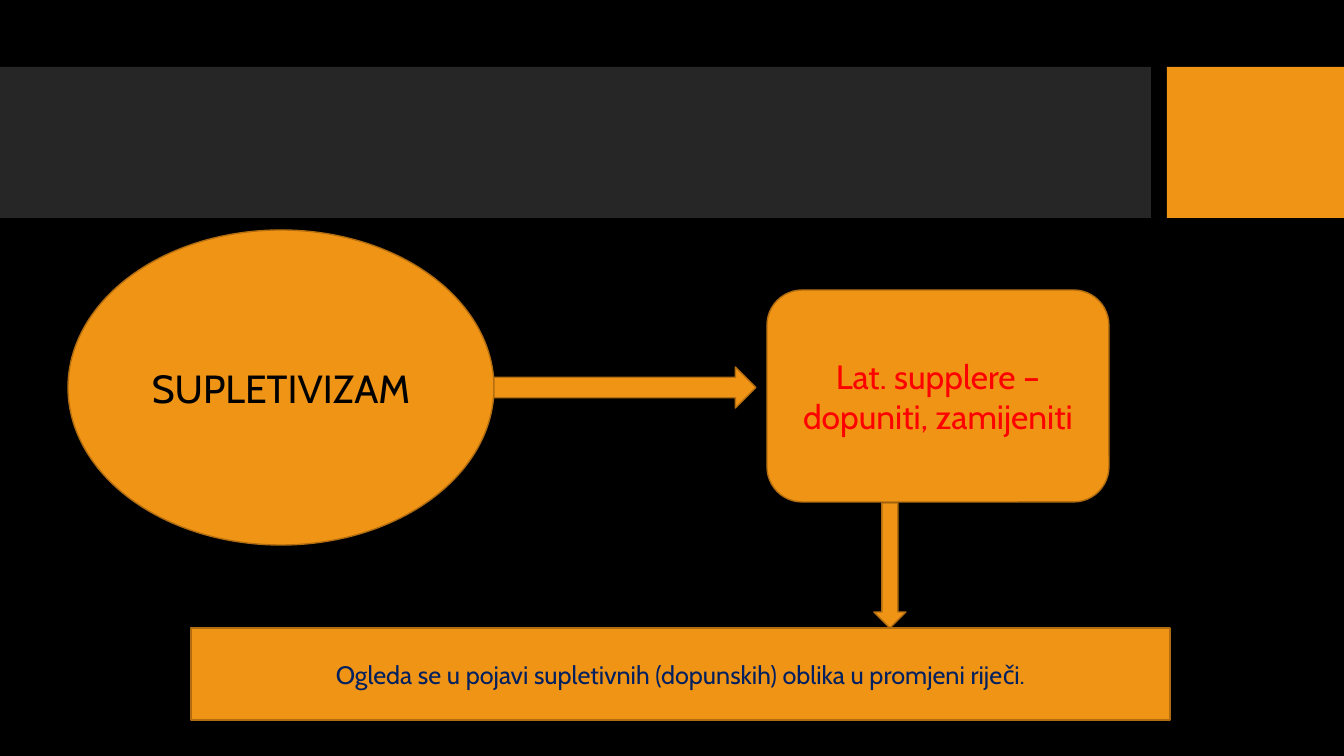
from pptx import Presentation
from pptx.dml.color import RGBColor
from pptx.enum.shapes import MSO_SHAPE
from pptx.enum.text import MSO_ANCHOR, PP_ALIGN
from pptx.util import Emu, Pt

RECT, OVAL, ROUNDED = MSO_SHAPE.RECTANGLE, MSO_SHAPE.OVAL, MSO_SHAPE.ROUNDED_RECTANGLE
RIGHT_ARROW, DOWN_ARROW = MSO_SHAPE.RIGHT_ARROW, MSO_SHAPE.DOWN_ARROW
MIDDLE, CENTER = MSO_ANCHOR.MIDDLE, PP_ALIGN.CENTER

SLIDE_W, SLIDE_H = 1344, 756
EMU_PER_PX = 12192000 / SLIDE_W
FONT = "Cabin"
BLACK, CHARCOAL, ORANGE, BROWN = "000000", "262626", "F09415", "B26D10"
RED, NAVY = "FF0000", "002060"


def px(length):
    return Emu(round(length * EMU_PER_PX))


def color(hex_value):
    return RGBColor.from_string(hex_value)


def add_block(slide, kind, box, fill, outline=None):
    block = slide.shapes.add_shape(kind, *(px(length) for length in box))
    block.shadow.inherit = False
    block.fill.solid()
    block.fill.fore_color.rgb = color(fill)
    if outline:
        block.line.color.rgb = color(outline)
        block.line.width = Pt(1)
    else:
        block.line.fill.background()
    return block


def write_label(block, text, size, text_color):
    frame = block.text_frame
    frame.word_wrap = True
    frame.vertical_anchor = MIDDLE
    paragraph = frame.paragraphs[0]
    paragraph.alignment = CENTER
    run = paragraph.add_run()
    run.text = text
    for name, value in {"name": FONT, "size": Pt(size)}.items():
        setattr(run.font, name, value)
    run.font.color.rgb = color(text_color)


def draw_header_band(slide, box):
    left, top, width, height = box
    accent_w, gap = 177, 16
    add_block(slide, RECT, (left, top, width - accent_w - gap, height), CHARCOAL)
    add_block(slide, RECT, (left + width - accent_w, top, accent_w, height), ORANGE)


def draw_concept_diagram(slide, box):
    left, top, width, height = box
    term_w, term_h = 426, 315
    origin_x, origin_y, origin_w, origin_h = left + 699, top + 60, 342, 212
    meaning_x, meaning_w, meaning_h = left + 123, width - 123, 92
    meaning_y = top + height - meaning_h
    across_h, down_w = 41, 32

    # Term, its Latin origin and its meaning
    labelled = [
        (OVAL, (left, top, term_w, term_h), "SUPLETIVIZAM", 28, BLACK),
        (ROUNDED, (origin_x, origin_y, origin_w, origin_h),
         "Lat. supplere – dopuniti, zamijeniti", 24, RED),
        (RECT, (meaning_x, meaning_y, meaning_w, meaning_h),
         "Ogleda se u pojavi supletivnih (dopunskih) oblika u promjeni riječi.", 18, NAVY),
    ]
    for kind, place, text, size, text_color in labelled:
        write_label(add_block(slide, kind, place, ORANGE, BROWN), text, size, text_color)

    # Block arrows between them
    across_x, across_y = left + term_w, top + (term_h - across_h) // 2
    down_y = origin_y + origin_h + 1
    arrows = [
        (RIGHT_ARROW, (across_x, across_y, origin_x - 11 - across_x, across_h)),
        (DOWN_ARROW, (origin_x + 107, down_y, down_w, meaning_y - down_y)),
    ]
    for kind, place in arrows:
        add_block(slide, kind, place, ORANGE, BROWN)


def main():
    deck = Presentation()
    deck.slide_width, deck.slide_height = px(SLIDE_W), px(SLIDE_H)
    slide = deck.slides.add_slide(deck.slide_layouts[6])
    slide.background.fill.solid()
    slide.background.fill.fore_color.rgb = color(BLACK)
    draw_header_band(slide, (0, 67, SLIDE_W, 151))
    draw_concept_diagram(slide, (68, 230, 1102, 490))
    deck.save("out.pptx")


if __name__ == "__main__":
    main()
